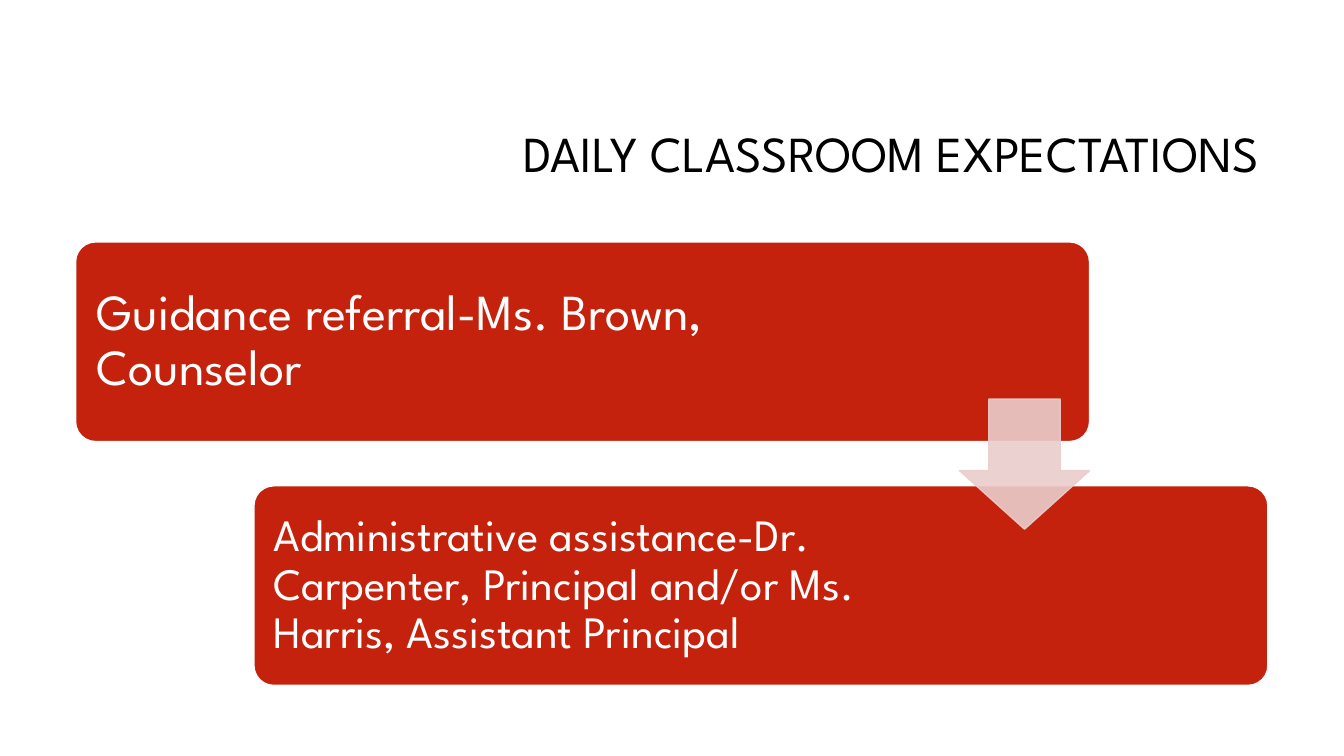
import pptx
import pptx.dml.color
import pptx.enum.shapes
import pptx.enum.text
import pptx.oxml
import pptx.oxml.ns
import pptx.util
from pptx.util import Pt

RGBColor = pptx.dml.color.RGBColor
SHAPES = pptx.enum.shapes.MSO_SHAPE
ALIGN = pptx.enum.text.PP_ALIGN

BLACK = RGBColor(0x00, 0x00, 0x00)
WHITE = RGBColor(0xFF, 0xFF, 0xFF)
RED = RGBColor(0xC4, 0x22, 0x0D)
PINK = RGBColor(0xEA, 0xCD, 0xCC)
FONT = "League Spartan"

CARD_LEFT, CARD_TOP = 54, 172.8
CARD_WIDTH, CARD_HEIGHT = 724.3, 142.6
STEP_RIGHT, STEP_DOWN = 127.4, 174.2
TEXT_MARGIN = 4.3
ARROW_SIZE = 92.9

# Wording, font size, text width and text inset of each step
STEPS = [
    ("Guidance referral-Ms. Brown, Counselor", 36, 576.7, 10.8),
    ("Administrative assistance-Dr. Carpenter, Principal and/or Ms. "
     "Harris, Assistant Principal", 32, 495.4, 9.6),
]


def add_text(page, text, bounds, size, color, align, insets):
    """Add wrapped, vertically centred text; insets are horizontal, vertical."""
    box = page.shapes.add_textbox(*map(Pt, bounds))
    frame = box.text_frame
    frame.word_wrap = True
    frame.vertical_anchor = pptx.enum.text.MSO_ANCHOR.MIDDLE
    frame.margin_left = frame.margin_right = Pt(insets[0])
    frame.margin_top = frame.margin_bottom = Pt(insets[1])
    frame.text = text
    para = frame.paragraphs[0]
    para.alignment = align
    para.line_spacing = 0.9
    span = para.runs[0]
    span.font.name = FONT
    span.font.size = Pt(size)
    span.font.color.rgb = color


def add_filled_shape(page, kind, bounds, adjustments, fill, line):
    shape = page.shapes.add_shape(kind, *map(Pt, bounds))
    shape.shadow.inherit = False
    for index, value in enumerate(adjustments):
        shape.adjustments[index] = value
    shape.fill.solid()
    shape.fill.fore_color.rgb = fill
    shape.line.color.rgb = line
    shape.line.width = Pt(1)
    return shape


def set_opacity(shape, percent):
    """Apply one opacity to both the fill and the outline."""
    for color in shape.element.spPr.iter(pptx.oxml.ns.qn("a:srgbClr")):
        alpha = pptx.oxml.parse_xml(
            f'<a:alpha {pptx.oxml.ns.nsdecls("a")} val="{percent * 1000}"/>')
        color.append(alpha)


def add_step(page, index, text, size, text_width, inset):
    left = CARD_LEFT + index * STEP_RIGHT
    top = CARD_TOP + index * STEP_DOWN
    add_filled_shape(page, SHAPES.ROUNDED_RECTANGLE,
                     (left, top, CARD_WIDTH, CARD_HEIGHT), [0.1], RED, WHITE)
    bounds = (left + TEXT_MARGIN, top + TEXT_MARGIN,
              text_width, CARD_HEIGHT - 2 * TEXT_MARGIN)
    add_text(page, text, bounds, size, WHITE, ALIGN.LEFT, (inset, inset))


def add_step_arrow(page):
    left = CARD_LEFT + CARD_WIDTH - ARROW_SIZE
    arrow = add_filled_shape(page, SHAPES.DOWN_ARROW,
                             (left, 285.1, ARROW_SIZE, ARROW_SIZE),
                             [0.55, 0.45], PINK, PINK)
    set_opacity(arrow, 90)


def main():
    deck = pptx.Presentation()
    deck.slide_width, deck.slide_height = Pt(960), Pt(540)
    page = deck.slides.add_slide(deck.slide_layouts[6])
    add_text(page, "DAILY CLASSROOM EXPECTATIONS", (228.2, 60.5, 678.2, 101.5),
             36, BLACK, ALIGN.RIGHT, (7.2, 3.6))
    for index, step in enumerate(STEPS):
        add_step(page, index, *step)
    add_step_arrow(page)
    deck.save("out.pptx")


if __name__ == "__main__":
    main()
